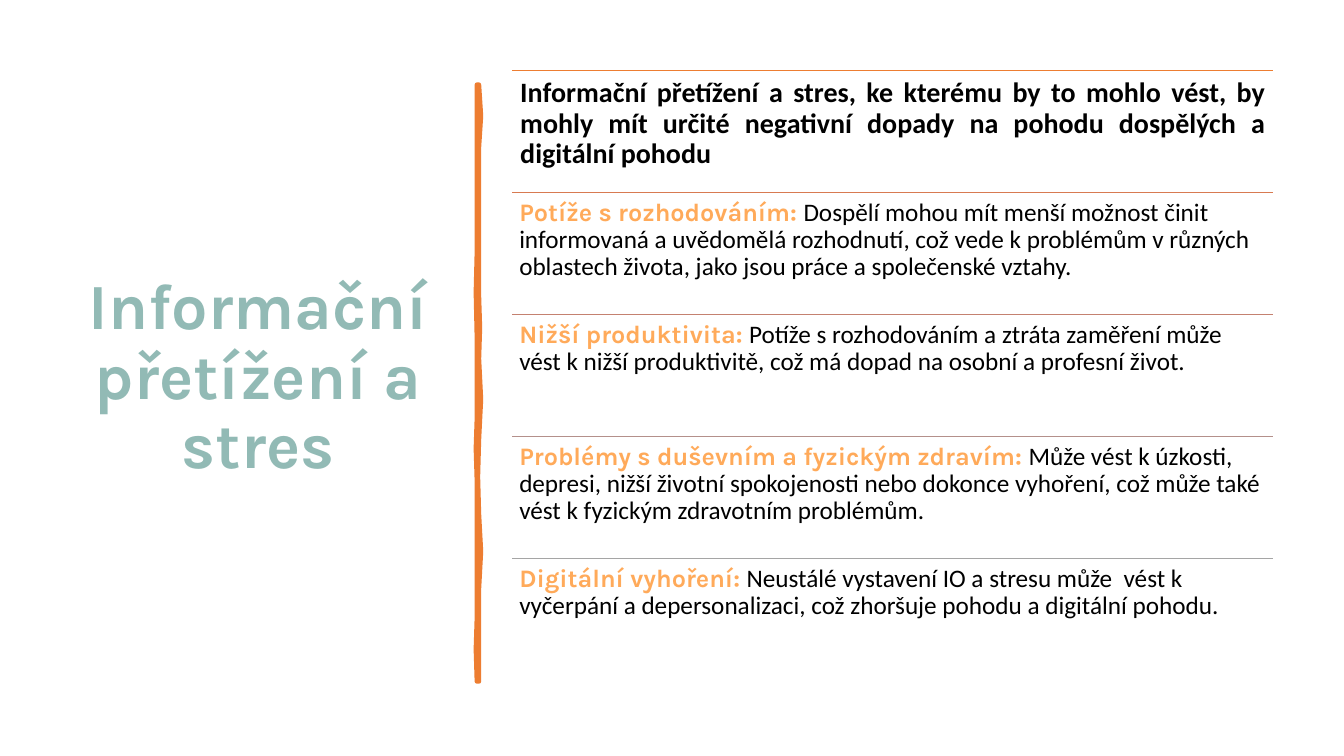
from dataclasses import dataclass

from lxml.etree import SubElement
from pptx import Presentation
from pptx.dml.color import RGBColor
from pptx.enum.text import MSO_ANCHOR, PP_ALIGN
from pptx.oxml.ns import qn
from pptx.util import Inches, Pt


@dataclass(frozen=True)
class Theme:
    heading_font: str = "Karla"
    body_font: str = "Calibri"
    title_size: float = 46
    lead_size: float = 20
    item_size: float = 18
    rule_width: float = 1
    brush_width: float = 3.25
    title: str = "92BAB5"
    accent: str = "ED7D31"
    label: str = "FFAA5A"
    body: str = "000000"
    rules: tuple = ("ED7D31", "D87A51", "C48170", "B4908B", "A5A5A5")


THEME = Theme()

TITLE = "Informační přetížení a stres"
LEAD = ("Informační přetížení a stres, ke kterému by to mohlo vést, by mohly mít "
        "určité negativní dopady na pohodu dospělých a digitální pohodu")
IMPACTS = [
    ("Potíže s rozhodováním: ",
     "Dospělí mohou mít menší možnost činit informovaná a uvědomělá rozhodnutí, "
     "což vede k problémům v různých oblastech života, jako jsou práce a společenské vztahy."),
    ("Nižší produktivita: ",
     "Potíže s rozhodováním a ztráta zaměření může vést k nižší produktivitě, "
     "což má dopad na osobní a profesní život."),
    ("Problémy s duševním a fyzickým zdravím: ",
     "Může vést k úzkosti, depresi, nižší životní spokojenosti nebo dokonce vyhoření, "
     "což může také vést k fyzickým zdravotním problémům."),
    ("Digitální vyhoření: ",
     "Neustálé vystavení IO a stresu může  vést k vyčerpání a depersonalizaci, "
     "což zhoršuje pohodu a digitální pohodu."),
]

# Rows of the list on the right
LIST_LEFT, LIST_TOP, LIST_WIDTH, ROW_HEIGHT = 5.08, 0.7, 7.55, 1.21

# Outline of the hand-drawn divider: down its right edge, up its left edge
BRUSH_OUTLINE = [
    (4.75, 0.84), (4.77, 1.15), (4.75, 1.46), (4.75, 2.26), (4.75, 2.94),
    (4.76, 3.25), (4.75, 3.56), (4.77, 3.96), (4.75, 4.36), (4.74, 4.73),
    (4.75, 5.1), (4.77, 5.47), (4.75, 5.84), (4.75, 6.76),
    (4.73, 6.76), (4.72, 6.44), (4.73, 6.13), (4.73, 4.77), (4.72, 4.45),
    (4.73, 4.15), (4.73, 3.35), (4.72, 2.9), (4.73, 2.5), (4.73, 1.81),
    (4.73, 0.84),
]


def style_font(font, face, size, color, bold):
    font.name = face
    font.size = Pt(size)
    font.bold = bold
    font.color.rgb = RGBColor.from_string(color)


def add_text_area(slide, left, top, width, height, align, inset=None):
    """Add a wrapping text box and return its frame and first paragraph."""
    frame = slide.shapes.add_textbox(
        Inches(left), Inches(top), Inches(width), Inches(height)).text_frame
    frame.word_wrap = True
    if inset is not None:
        frame.margin_left = frame.margin_right = Inches(inset)
        frame.margin_top = frame.margin_bottom = Inches(inset)
    paragraph = frame.paragraphs[0]
    paragraph.alignment = align
    paragraph.line_spacing = 0.9
    return frame, paragraph


def add_title(slide):
    frame, heading = add_text_area(slide, 0.69, 0.7, 3.74, 6.11, PP_ALIGN.CENTER)
    frame.vertical_anchor = MSO_ANCHOR.MIDDLE
    heading.text = TITLE
    style_font(heading.font, THEME.heading_font, THEME.title_size, THEME.title, True)


def add_brush_divider(slide):
    points = [(Inches(x), Inches(y)) for x, y in BRUSH_OUTLINE]
    builder = slide.shapes.build_freeform(*points[0])
    builder.add_line_segments(points[1:], close=True)
    brush = builder.convert_to_shape()
    brush.shadow.inherit = False
    brush.fill.solid()
    brush.fill.fore_color.rgb = RGBColor.from_string(THEME.accent)
    brush.line.color.rgb = RGBColor.from_string(THEME.accent)
    brush.line.width = Pt(THEME.brush_width)
    SubElement(brush.line._get_or_add_ln(), qn("a:round"))


def add_rule(slide, top, color):
    rule = slide.shapes.add_connector(
        1, Inches(LIST_LEFT), Inches(top), Inches(LIST_LEFT + LIST_WIDTH), Inches(top))
    rule.line.color.rgb = RGBColor.from_string(color)
    rule.line.width = Pt(THEME.rule_width)
    SubElement(rule._element.spPr, qn("a:effectLst"))


def add_lead(slide, top):
    _, lead = add_text_area(
        slide, LIST_LEFT, top, LIST_WIDTH, ROW_HEIGHT, PP_ALIGN.JUSTIFY, 0.08)
    lead.text = LEAD
    style_font(lead.font, THEME.body_font, THEME.lead_size, THEME.body, True)


def add_impact(slide, top, label, description):
    _, impact = add_text_area(
        slide, LIST_LEFT, top, LIST_WIDTH, ROW_HEIGHT, PP_ALIGN.LEFT, 0.07)
    for text, face, color, bold in (
            (label, THEME.heading_font, THEME.label, True),
            (description, THEME.body_font, THEME.body, False)):
        run = impact.add_run()
        run.text = text
        style_font(run.font, face, THEME.item_size, color, bold)


def main():
    deck = Presentation()
    deck.slide_width, deck.slide_height = Inches(13.33), Inches(7.5)
    slide = deck.slides.add_slide(deck.slide_layouts[6])

    # Title and divider
    add_title(slide)
    add_brush_divider(slide)

    # Ruled list: the lead statement, then one row per impact
    row_tops = [LIST_TOP + row * ROW_HEIGHT for row in range(len(THEME.rules))]
    for top, color in zip(row_tops, THEME.rules):
        add_rule(slide, top, color)
    add_lead(slide, row_tops[0])
    for top, (label, description) in zip(row_tops[1:], IMPACTS):
        add_impact(slide, top, label, description)

    deck.save("out.pptx")


if __name__ == "__main__":
    main()
